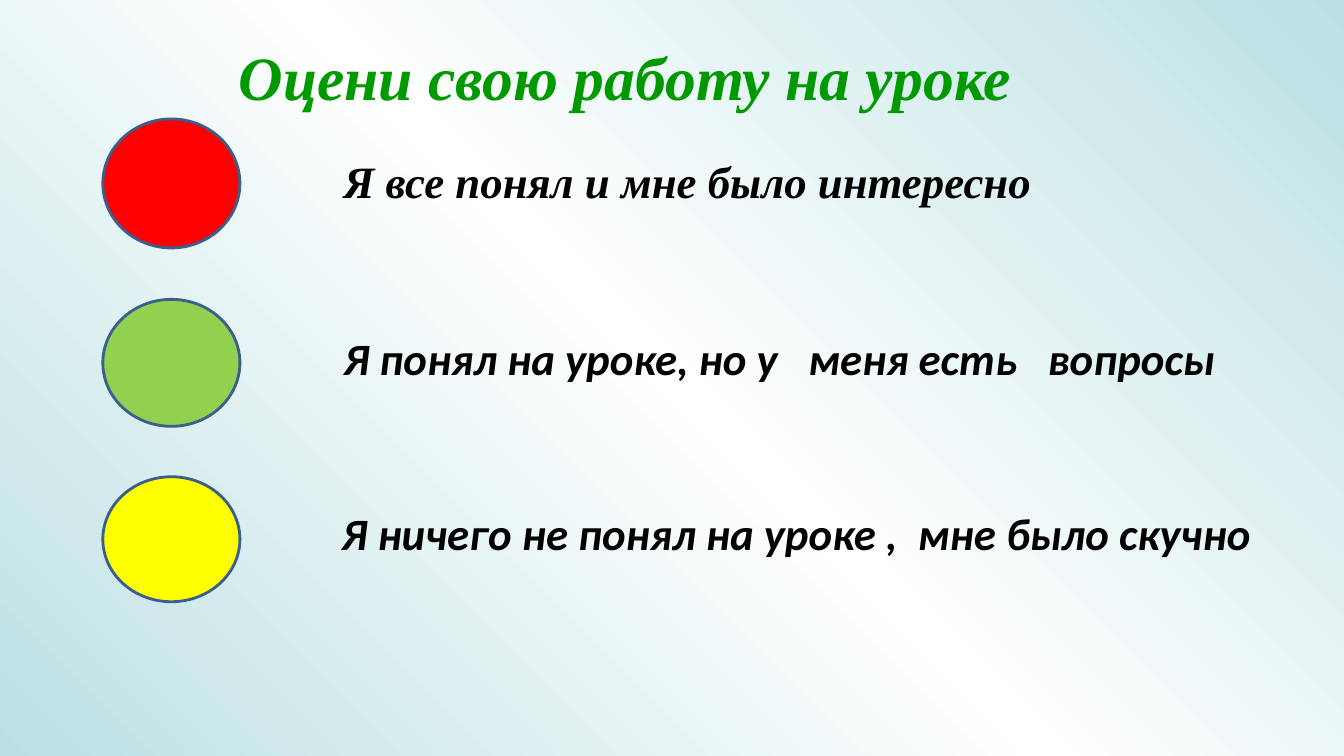
from copy import deepcopy
from dataclasses import dataclass

from pptx import Presentation
from pptx.dml.color import RGBColor
from pptx.enum.shapes import MSO_SHAPE as Shape
from pptx.enum.text import MSO_AUTO_SIZE as AutoSize
from pptx.oxml.ns import qn
from pptx.slide import Slide
from pptx.util import Inches, Pt

COLORS = {
    "edge": "BBE0E3",
    "middle": "FFFFFF",
    "title": "009900",
    "text": "000000",
    "outline": "3A5F8C",
    "red": "FF0000",
    "green": "92D050",
    "yellow": "FFFF00",
}
CIRCLE_LEFT, CIRCLE_WIDTH = 1.02, 1.36
HANGING_INDENT = 0.38


@dataclass(frozen=True)
class Label:
    text: str
    left: float
    top: float
    width: float
    height: float
    font: str
    size: int = 32
    color: str = "text"
    hanging: bool = True


@dataclass(frozen=True)
class Signal:
    color: str
    top: float
    height: float
    label: Label


TITLE = Label("Оцени свою работу на уроке", 2.27, 0.34, 8.4, 0.84,
              "Times New Roman", 44, "title", False)
SIGNALS = [
    Signal("red", 1.18, 1.28,
           Label("Я все понял и мне было интересно",
                 3.31, 1.48, 7.76, 0.64, "Times New Roman")),
    Signal("green", 2.97, 1.26,
           Label("Я понял на уроке, но у   меня есть   вопросы",
                 3.31, 3.23, 9.49, 0.64, "Calibri")),
    Signal("yellow", 4.73, 1.24,
           Label("Я ничего не понял на уроке ,  мне было скучно",
                 3.29, 4.97, 9.51, 1.29, "Calibri")),
]


def rgb(name: str) -> RGBColor:
    return RGBColor.from_string(COLORS[name])


def paint_background(page: Slide) -> None:
    fill = page.background.fill
    fill.gradient()
    fill.gradient_angle = 45
    stop_list = next(page.element.iter(qn("a:gsLst")))
    stop_list.append(deepcopy(stop_list[0]))
    for stop, position, color in zip(
        fill.gradient_stops, (0, 0.5, 1), ("edge", "middle", "edge")
    ):
        stop.position = position
        stop.color.rgb = rgb(color)


def add_label(page: Slide, label: Label) -> None:
    box = page.shapes.add_textbox(
        *map(Inches, (label.left, label.top, label.width, label.height))
    )
    frame = box.text_frame
    frame.word_wrap = True
    frame.auto_size = AutoSize.NONE
    para = frame.paragraphs[0]
    if label.hanging:
        para.space_before = Pt(label.size * 0.2)
        properties = para._p.get_or_add_pPr()
        properties.set("marL", str(Inches(HANGING_INDENT)))
        properties.set("indent", str(Inches(-HANGING_INDENT)))
    span = para.add_run()
    span.text = label.text
    font_format = {"name": label.font, "size": Pt(label.size),
                   "bold": True, "italic": True}
    for attribute, value in font_format.items():
        setattr(span.font, attribute, value)
    span.font.color.rgb = rgb(label.color)


def add_signal(page: Slide, signal: Signal) -> None:
    circle = page.shapes.add_shape(
        Shape.OVAL,
        *map(Inches, (CIRCLE_LEFT, signal.top, CIRCLE_WIDTH, signal.height)),
    )
    circle.shadow.inherit = False
    circle.fill.solid()
    circle.fill.fore_color.rgb = rgb(signal.color)
    circle.line.color.rgb = rgb("outline")
    circle.line.width = Pt(2)
    add_label(page, signal.label)


def main() -> None:
    deck = Presentation()
    deck.slide_width, deck.slide_height = Inches(13.33), Inches(7.5)
    page = deck.slides.add_slide(deck.slide_layouts[6])
    paint_background(page)
    add_label(page, TITLE)
    for signal in SIGNALS:
        add_signal(page, signal)
    deck.save("out.pptx")


if __name__ == "__main__":
    main()
